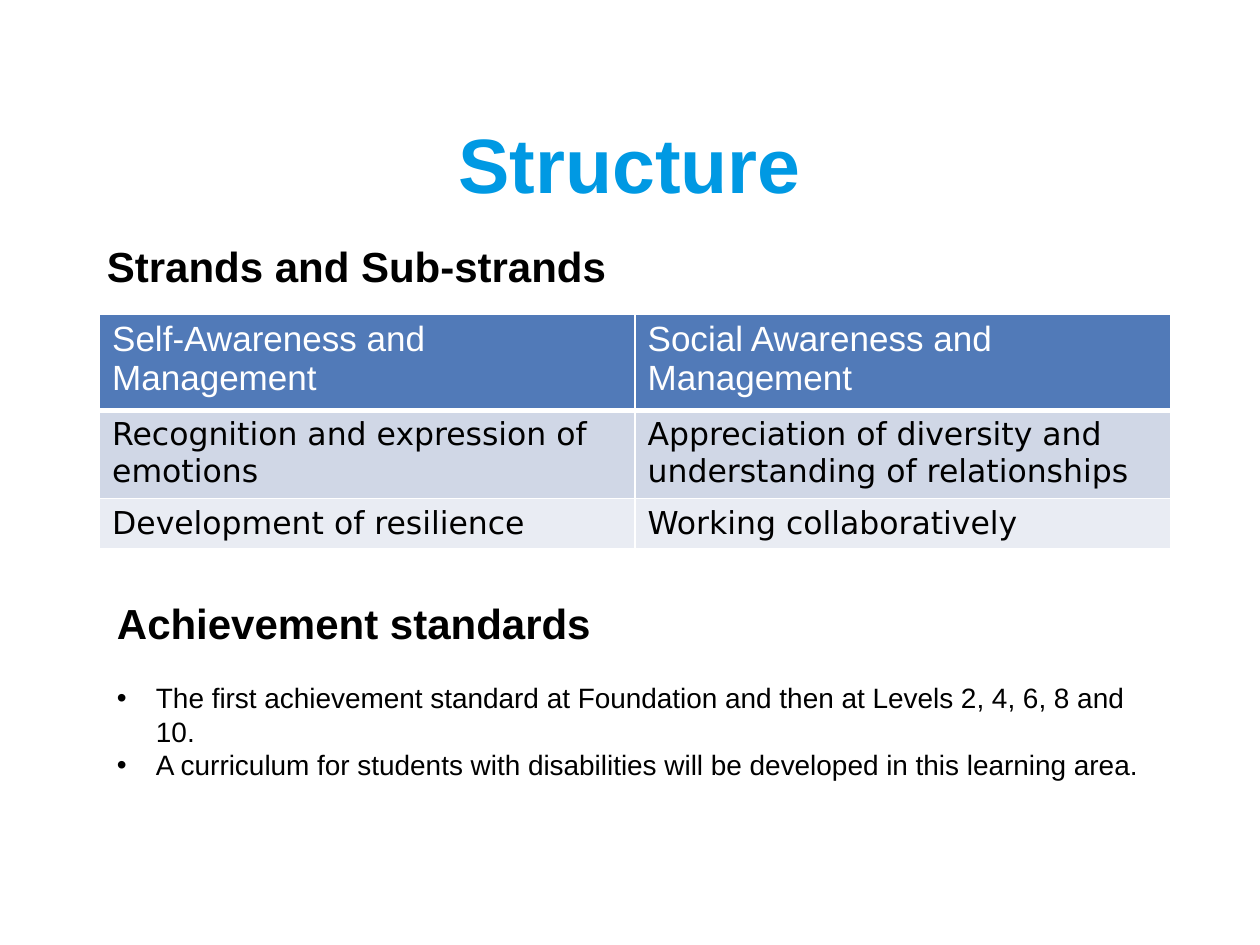
from dataclasses import dataclass

from lxml.etree import SubElement
from pptx import Presentation
from pptx.dml.color import RGBColor
from pptx.enum.text import MSO_ANCHOR, PP_ALIGN
from pptx.oxml.ns import qn
from pptx.util import Inches, Pt

WIDE, HIGH = Inches(10), Inches(7.5)

BLUE = RGBColor(0x00, 0x99, 0xE3)
BLACK = RGBColor(0x00, 0x00, 0x00)
WHITE = RGBColor(0xFF, 0xFF, 0xFF)
HEAD = RGBColor(0x51, 0x7A, 0xB8)
DARK = RGBColor(0xD0, 0xD7, 0xE6)
PALE = RGBColor(0xE9, 0xEC, 0xF3)


@dataclass(frozen=True)
class Box:
    """Place on the slide, in percent of its width and height."""
    left: float
    top: float
    width: float
    height: float

    def spot(self) -> dict:
        return {"left": int(WIDE * self.left / 100), "top": int(HIGH * self.top / 100),
                "width": int(WIDE * self.width / 100), "height": int(HIGH * self.height / 100)}


@dataclass(frozen=True)
class Row:
    """One table row: its height in percent, look and words."""
    height: float
    fill: RGBColor
    look: dict
    words: tuple


TITLE = {"name": "Arial", "size": Pt(44), "bold": True, "color": BLUE}
STRONG = {"name": "Arial", "size": Pt(24), "bold": True, "color": BLACK}
POINT = {"name": "Arial", "size": Pt(16), "bold": False, "color": BLACK}
TOP = {"name": "Arial", "size": Pt(20), "bold": False, "color": WHITE}
CELL = {"name": "DejaVu Sans", "size": Pt(18), "bold": False, "color": BLACK}

ROWS = (
    Row(9.47, HEAD, TOP, ("Self-Awareness and Management",
                          "Social Awareness and Management")),
    Row(9.07, DARK, CELL, ("Recognition and expression of emotions",
                           "Appreciation of diversity and understanding of relationships")),
    Row(5.2, PALE, CELL, ("Development of resilience", "Working collaboratively")),
)
POINTS = (
    "The first achievement standard at Foundation and then at Levels 2, 4, 6, 8 and 10.",
    "A curriculum for students with disabilities will be developed in this learning area.",
)


def write(para, text: str, look: dict) -> None:
    run = para.add_run()
    run.text = text
    for key, value in look.items():
        if key == "color":
            run.font.color.rgb = value
        else:
            setattr(run.font, key, value)


def place(shape, box: Box) -> None:
    for key, value in box.spot().items():
        setattr(shape, key, value)


def add_text(slide, box: Box, text: str, look: dict):
    frame = slide.shapes.add_textbox(**box.spot()).text_frame
    frame.word_wrap = True
    write(frame.paragraphs[0], text, look)
    return frame


def add_point(frame, text: str, gap: float) -> None:
    para = frame.add_paragraph()
    props = para._p.get_or_add_pPr()
    props.set("marL", str(Inches(0.31)))
    props.set("indent", str(-Inches(0.31)))
    para.space_before = Pt(gap)
    SubElement(props, qn("a:buFont"), typeface="Arial")
    SubElement(props, qn("a:buChar"), char="•")
    write(para, text, POINT)


def add_edge(cell, side: str, width: float) -> None:
    line = SubElement(cell._tc.get_or_add_tcPr(), qn(f"a:{side}"), w=str(Pt(width)))
    fill = SubElement(line, qn("a:solidFill"))
    SubElement(fill, qn("a:srgbClr"), val=str(WHITE))


def add_grid(slide, box: Box, rows: tuple) -> None:
    table = slide.shapes.add_table(len(rows), len(rows[0].words), **box.spot()).table
    for i, row in enumerate(rows):
        table.rows[i].height = int(HIGH * row.height / 100)
        for j, text in enumerate(row.words):
            cell = table.cell(i, j)
            write(cell.text_frame.paragraphs[0], text, row.look)
            # Edges come before the fill; the rule under the header is thick
            for side in ("lnL", "lnR", "lnT", "lnB"):
                thick = (i, side) in ((0, "lnB"), (1, "lnT"))
                add_edge(cell, side, 3 if thick else 1)
            cell.fill.solid()
            cell.fill.fore_color.rgb = row.fill


def main() -> None:
    deck = Presentation()
    deck.slide_width, deck.slide_height = WIDE, HIGH
    slide = deck.slides.add_slide(deck.slide_layouts[5])

    # Title
    title = slide.shapes.title
    place(title, Box(7.5, 8.93, 85, 16.67))
    title.text_frame.vertical_anchor = MSO_ANCHOR.MIDDLE
    para = title.text_frame.paragraphs[0]
    para.alignment = PP_ALIGN.CENTER
    write(para, "Structure", TITLE)

    # Strands
    add_text(slide, Box(7.5, 24.8, 85, 7.47), "Strands and Sub-strands", STRONG)
    add_grid(slide, Box(7.9, 33.2, 85, sum(row.height for row in ROWS)), ROWS)

    # Standards
    frame = add_text(slide, Box(8.3, 62.53, 84.3, 21.07), "Achievement standards", STRONG)
    for i, text in enumerate(POINTS):
        add_point(frame, text, 0 if i else 19)

    deck.save("out.pptx")


if __name__ == "__main__":
    main()
